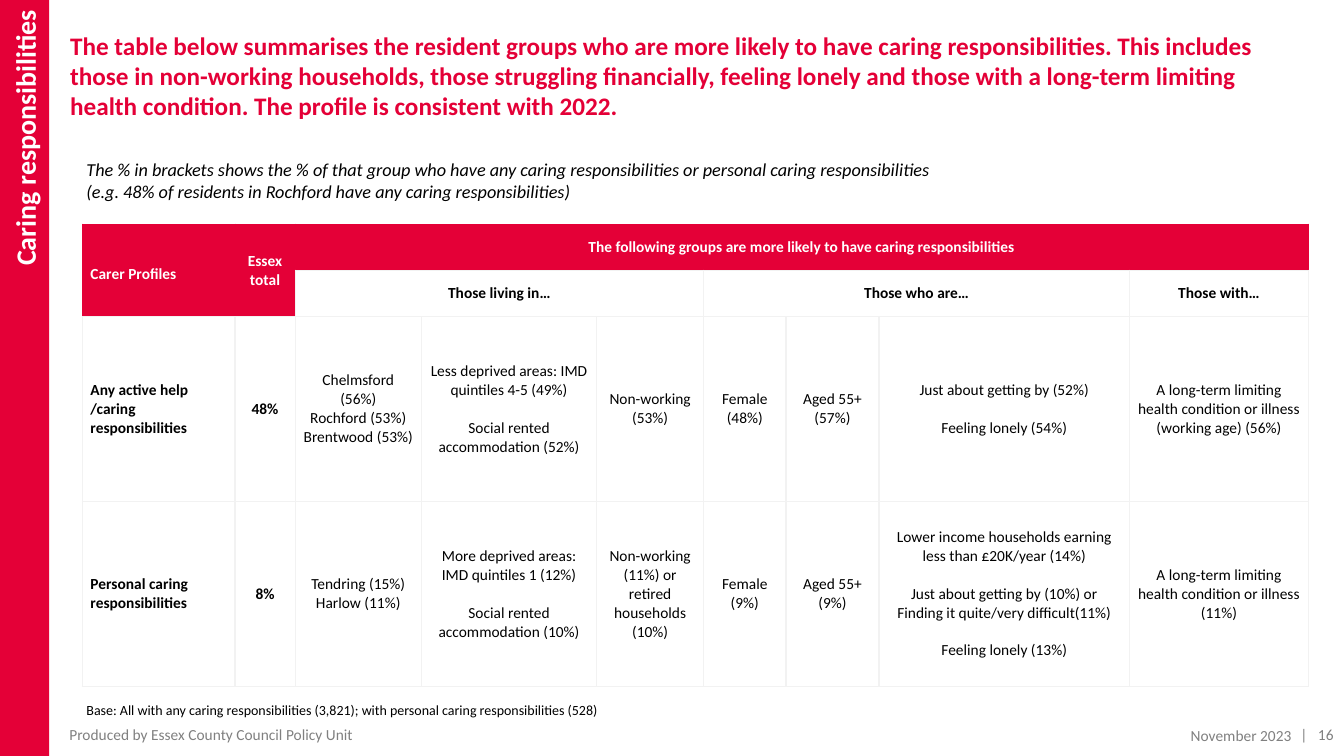
from lxml import etree
from pptx import Presentation, util as u
from pptx.dml.color import RGBColor
from pptx.enum import shapes, text
from pptx.oxml.ns import qn

COL = {"red": "E40037", "white": "FFFFFF", "black": "000000", "grey": "808080", "line": "F2F2F2"}
LEFT, CENTRE, RIGHT = text.PP_ALIGN.LEFT, text.PP_ALIGN.CENTER, text.PP_ALIGN.RIGHT
TOP, MIDDLE = text.MSO_ANCHOR.TOP, text.MSO_ANCHOR.MIDDLE


def write(tf, words, size, colour, bold=False, italic=False, align=LEFT):
    p, gap = tf.paragraphs[0], False
    for i, line in enumerate(words.split("\n")):
        if not line:
            gap = True
            continue
        if i:
            p = tf.add_paragraph()
        p.alignment = align
        if gap:
            p.space_before = u.Pt(size * 1.22)
            gap = False
        r = p.add_run()
        r.text = line
        r.font.name, r.font.size = "Calibri", u.Pt(size)
        r.font.bold, r.font.italic = bold, italic
        r.font.color.rgb = RGBColor.from_string(COL[colour])


def outline(cell, colour, width):
    tc_pr = cell._tc.get_or_add_tcPr()
    for i, side in enumerate(("a:lnL", "a:lnR", "a:lnT", "a:lnB")):
        ln = etree.Element(qn(side), w=str(u.Pt(width)))
        fill = etree.SubElement(ln, qn("a:solidFill"))
        etree.SubElement(fill, qn("a:srgbClr"), val=COL[colour])
        tc_pr.insert(i, ln)


prs = Presentation()
prs.slide_width, prs.slide_height = u.Cm(33.87), u.Cm(19.05)
s = prs.slides.add_slide(prs.slide_layouts[6])

bar = s.shapes.add_shape(shapes.MSO_SHAPE.RECTANGLE, 0, 0, u.Cm(1.24), prs.slide_height)
bar.shadow.inherit = False
bar.fill.solid()
bar.fill.fore_color.rgb = RGBColor.from_string(COL["red"])
bar.line.fill.background()
tf = bar.text_frame
tf.vertical_anchor = MIDDLE
tf.margin_left = tf.margin_right = tf.margin_top = u.Cm(0.25)
tf.margin_bottom = u.Cm(0.13)
bar.element.txBody.bodyPr.set("vert", "vert270")
write(tf, "Caring responsibilities", 20, "white", bold=True, align=RIGHT)

TITLE = ("The table below summarises the resident groups who are more likely to have caring "
         "responsibilities. This includes those in non-working households, those struggling "
         "financially, feeling lonely and those with a long-term limiting health condition. "
         "The profile is consistent with 2022.")
NOTE = ("The % in brackets shows the % of that group who have any caring responsibilities or "
        "personal caring responsibilities\n"
        "(e.g. 48% of residents in Rochford have any caring responsibilities)")
BASE = "Base: All with any caring responsibilities (3,821); with personal caring responsibilities (528)"

boxes = [
    (1.52, 0.64, 31.45, 2.95, TOP, TITLE, 18, "red", True, False, LEFT),
    (31.7, 18.31, 2.16, 0.38, MIDDLE, "|\u2003 16".replace("\u2003", "  "), 11, "grey", False, False, RIGHT),
    (1.5, 18.31, 16.38, 0.38, MIDDLE, "Produced by Essex County Council Policy Unit", 11, "grey", False, False, LEFT),
    (26.7, 18.34, 6.1, 0.38, MIDDLE, "November 2023", 11, "grey", False, False, RIGHT),
    (1.93, 3.86, 29.62, 1.37, TOP, NOTE, 13, "black", False, True, LEFT),
    (1.93, 17.55, 27.53, 0.69, TOP, BASE, 10, "black", False, False, LEFT),
]
for x, y, w, h, anchor, words, size, colour, bold, italic, align in boxes:
    tf = s.shapes.add_textbox(u.Cm(x), u.Cm(y), u.Cm(w), u.Cm(h)).text_frame
    tf.word_wrap = True
    tf.vertical_anchor = anchor
    write(tf, words, size, colour, bold, italic, align)

widths = [3.84, 1.52, 3.18, 4.42, 2.69, 2.08, 2.34, 6.32, 4.5]
heights = [1.17, 1.17, 4.65, 4.67]
rows = [
    ["Carer Profiles", "Essex\ntotal", "The following groups are more likely to have caring responsibilities",
     "", "", "", "", "", ""],
    ["", "", "Those living in…", "", "", "Those who are…", "", "", "Those with…"],
    ["Any active help /caring responsibilities", "48%", "Chelmsford (56%)\nRochford (53%)\nBrentwood (53%)",
     "Less deprived areas: IMD quintiles 4-5 (49%)\n\nSocial rented accommodation (52%)",
     "Non-working (53%)", "Female (48%)", "Aged 55+ (57%)",
     "Just about getting by (52%)\n\nFeeling lonely (54%)",
     "A long-term limiting health condition or illness (working age) (56%)"],
    ["Personal caring responsibilities", "8%", "Tendring (15%)\nHarlow (11%)",
     "More deprived areas: IMD quintiles 1 (12%)\n\nSocial rented accommodation (10%)",
     "Non-working (11%) or retired households (10%)", "Female (9%)", "Aged 55+ (9%)",
     "Lower income households earning less than £20K/year (14%)\n\n"
     "Just about getting by (10%) or Finding it quite/very difficult(11%)\n\nFeeling lonely (13%)",
     "A long-term limiting health condition or illness (11%)"],
]
table = s.shapes.add_table(len(rows), len(widths), u.Cm(2.08), u.Cm(5.64),
                           u.Cm(sum(widths)), u.Cm(sum(heights))).table
table.first_row = table.horz_banding = False
for column, width in zip(table.columns, widths):
    column.width = u.Cm(width)
for row, height in zip(table.rows, heights):
    row.height = u.Cm(height)

for i, row in enumerate(rows):
    for j, words in enumerate(row):
        cell = table.cell(i, j)
        header = i == 0 or (i == 1 and j < 2)
        cell.fill.solid()
        cell.fill.fore_color.rgb = RGBColor.from_string(COL["red" if header else "white"])
        outline(cell, "red" if header else "line", 0.5 if header else 1)
        cell.vertical_anchor = MIDDLE
        cell.margin_left = cell.margin_right = u.Cm(0.1 if header and j == 1 else 0.2)
        cell.margin_top = cell.margin_bottom = u.Cm(0.2 if i > 1 and j else 0.02)
        if j == 0:
            cell.margin_right = u.Cm(0.1)
            cell.margin_top = u.Cm(0.02 if i else 0.2)
        if words:
            write(cell.text_frame, words, 11, "white" if header else "black",
                  bold=i < 2 or j < 2, align=CENTRE if j else LEFT)

for top, left, bottom, right in [(0, 0, 1, 0), (0, 1, 1, 1), (0, 2, 0, 8), (1, 2, 1, 4), (1, 5, 1, 7)]:
    table.cell(top, left).merge(table.cell(bottom, right))

prs.save("out.pptx")
